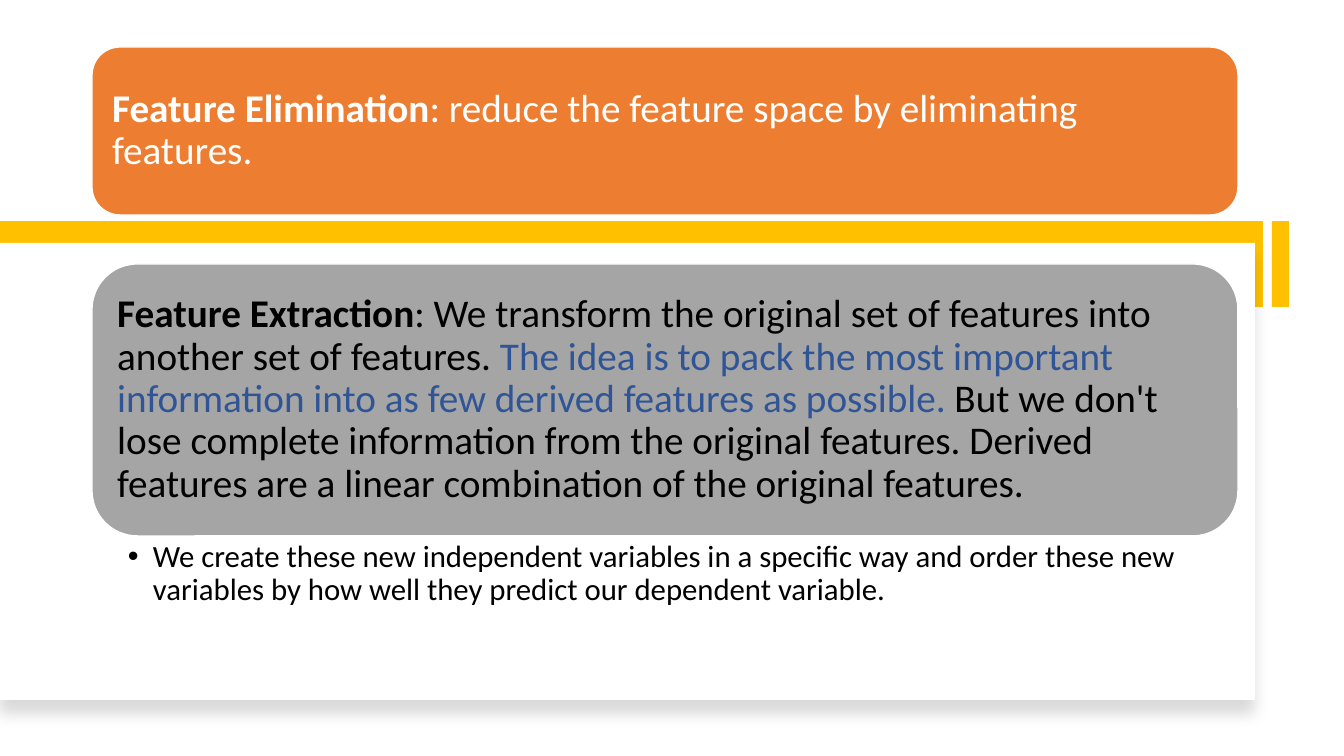
from lxml import etree
from pptx import Presentation
from pptx import util as u
from pptx.dml.color import RGBColor
from pptx.enum import shapes, text
from pptx.oxml.ns import qn

PX = 914400 / 100.8
BLACK, WHITE, GOLD = "000000", "FFFFFF", "FFC000"

BACKDROP = [
    ((1272, 221, 17, 86), GOLD),
    ((0, 221, 1263, 86), GOLD),
    ((0, 243, 1255, 457), WHITE),
]
CARDS = [
    ((92, 47, 1146, 168), "ED7D31", [
        ("Feature Elimination", WHITE, True),
        (": reduce the feature space by eliminating features.", WHITE, False),
    ]),
    ((92, 264, 1146, 272), "A5A5A5", [
        ("Feature Extraction", BLACK, True),
        (": We transform the original set of features into another set of features. ", BLACK, False),
        ("The idea is to pack the most important information into as few derived "
         "features as possible. ", "2F5597", False),
        ("But we don't lose complete information from the original features. Derived "
         "features are a linear combination of the original features.", BLACK, False),
    ]),
]
NOTE_BOX = (92, 537, 1146, 91)
NOTE = [("We create these new independent variables in a specific way and order these new "
         "variables by how well they predict our dependent variable.", BLACK, False)]


def px(n):
    return u.Emu(round(n * PX))


def rgb(color):
    return RGBColor.from_string(color)


def add_block(kind, box, fill):
    sp = slide.shapes.add_shape(kind, *map(px, box))
    sp.shadow.inherit = False
    sp.fill.solid()
    sp.fill.fore_color.rgb = rgb(fill)
    sp.line.fill.background()
    return sp


def write(sp, runs, size, insets, anchor):
    tf = sp.text_frame
    tf.word_wrap = True
    tf.auto_size = text.MSO_AUTO_SIZE.NONE
    tf.vertical_anchor = anchor
    tf.margin_left, tf.margin_top, tf.margin_right, tf.margin_bottom = map(px, insets)
    p = tf.paragraphs[0]
    p.alignment = text.PP_ALIGN.LEFT
    p.line_spacing = 0.9
    p.space_before = u.Pt(0)
    for words, color, bold in runs:
        r = p.add_run()
        r.text = words
        r.font.name = "Calibri"
        r.font.size = u.Pt(size)
        r.font.bold = bold
        r.font.color.rgb = rgb(color)
    return p


def add_shadow(sp, color, alpha, blur, dist, angle):
    effects = sp._element.spPr.find(qn("a:effectLst"))
    shadow = etree.SubElement(effects, qn("a:outerShdw"), blurRad=str(u.Pt(blur)),
                              dist=str(u.Pt(dist)), dir=str(angle * 60000), rotWithShape="0")
    tint = etree.SubElement(shadow, qn("a:srgbClr"), val=color)
    etree.SubElement(tint, qn("a:alpha"), val=str(alpha * 1000))


prs = Presentation()
prs.slide_width, prs.slide_height = px(1344), px(756)
slide = prs.slides.add_slide(prs.slide_layouts[1])
title = slide.shapes.title._element
title.getparent().remove(title)
note = slide.placeholders[1]

for box, fill in BACKDROP:
    panel = add_block(shapes.MSO_SHAPE.RECTANGLE, box, fill)
add_shadow(panel, BLACK, 15, 11, 10, 90)

for box, fill, runs in CARDS:
    card = add_block(shapes.MSO_SHAPE.ROUNDED_RECTANGLE, box, fill)
    card.line.color.rgb = rgb(WHITE)
    card.line.width = u.Pt(1)
    write(card, runs, 28, (12, 12, 12, 12), text.MSO_ANCHOR.MIDDLE)

note.left, note.top, note.width, note.height = map(px, NOTE_BOX)
p = write(note, NOTE, 22, (36, 4, 22, 4), text.MSO_ANCHOR.TOP)
pPr = p._p.get_or_add_pPr()
pPr.set("marL", str(px(25)))
pPr.set("indent", str(-px(25)))
etree.SubElement(pPr, qn("a:buChar"), char="•")
slide.shapes._spTree.append(note._element)

prs.save("out.pptx")
